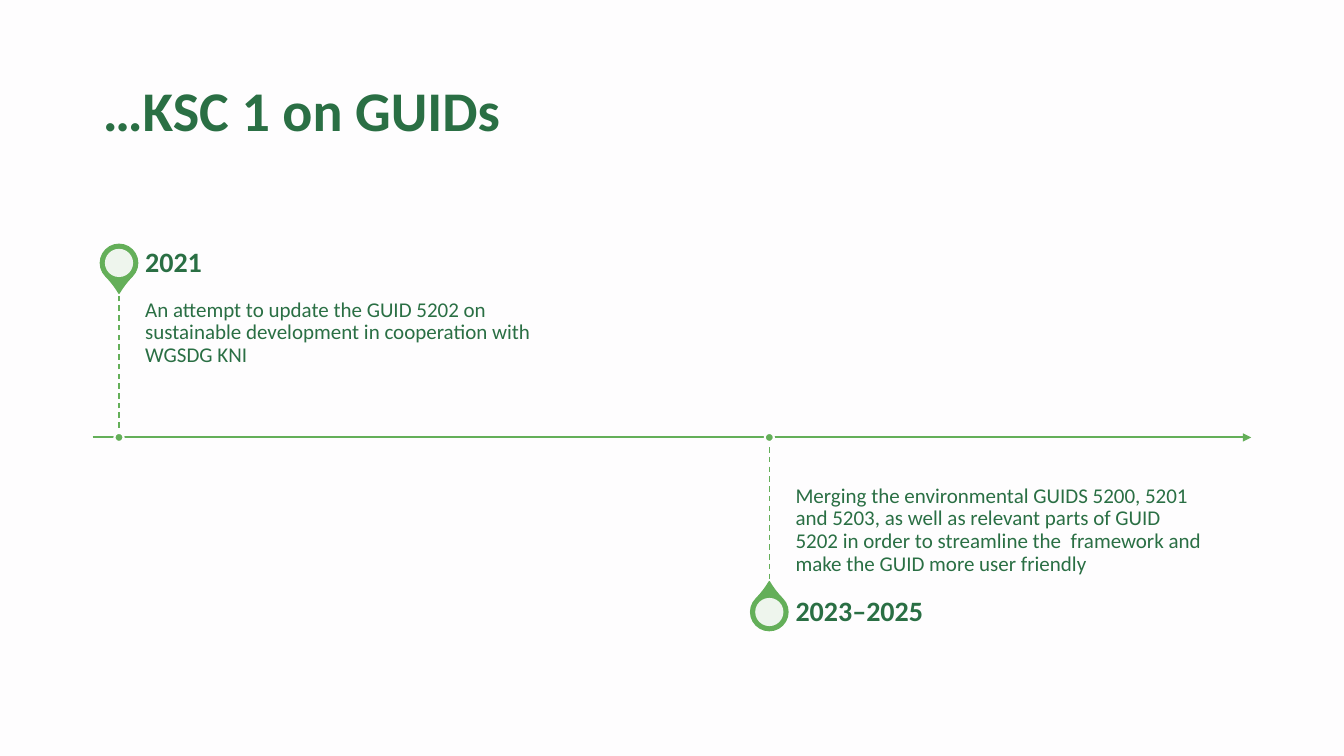
from dataclasses import dataclass

from lxml import etree
from pptx import Presentation
from pptx import util as u
from pptx.dml.color import RGBColor
from pptx.enum import dml, shapes, text
from pptx.oxml import ns


@dataclass(frozen=True)
class Theme:
    paper: str = "FEFDFE"
    ink: str = "2A6F44"
    accent: str = "64AF59"
    font: str = "Calibri"
    title: int = 40
    date: int = 20
    body: int = 15
    thin: float = 1
    thick: float = 1.5
    spacing: float = 0.9


@dataclass(frozen=True)
class Box:
    left: float
    top: float
    width: float
    height: float

    def lengths(self):
        return [u.Inches(n) for n in (self.left, self.top, self.width, self.height)]


THEME = Theme()
WIDTH, HEIGHT = 13.33, 7.5
MARGIN = 0.92
CONTENT = WIDTH - 2 * MARGIN
AXIS = 4.34
STEM = 0.26      # from the left of a milestone to its stem
GUTTER = 0.26    # from the stem to the text
PIN, HOLE, DOT = 0.37, 0.28, 0.09

MILESTONES = [
    (0, True, "2021",
     "An attempt to update the GUID 5202 on sustainable development "
     "in cooperation with WGSDG KNI"),
    (6.45, False, "2023–2025",
     "Merging the environmental GUIDS 5200, 5201 and 5203, as well as relevant "
     "parts of GUID 5202 in order to streamline the  framework and make the "
     "GUID more user friendly"),
]


def colour(value):
    return RGBColor.from_string(value)


def write(holder, words, *, size, bold=False, anchor=text.MSO_ANCHOR.MIDDLE,
          insets=(0.1, 0.05, 0.1, 0.05)):
    """Fill a shape with one formatted paragraph."""
    frame = holder.text_frame
    frame.word_wrap = True
    frame.auto_size = text.MSO_AUTO_SIZE.NONE
    frame.vertical_anchor = anchor
    (frame.margin_left, frame.margin_top,
     frame.margin_right, frame.margin_bottom) = map(u.Inches, insets)
    para = frame.paragraphs[0]
    para.alignment = text.PP_ALIGN.LEFT
    para.line_spacing = THEME.spacing
    span = para.add_run()
    span.text = words
    span.font.name = THEME.font
    span.font.size = u.Pt(size)
    span.font.bold = bold
    span.font.color.rgb = colour(THEME.ink)


def add_text(page, box, words, **style):
    write(page.shapes.add_textbox(*box.lengths()), words, **style)


def add_line(page, start, end, width, dash=None, arrow=False):
    line = page.shapes.add_connector(
        shapes.MSO_CONNECTOR.STRAIGHT, *map(u.Inches, (*start, *end)))
    line.line.color.rgb = colour(THEME.accent)
    line.line.width = u.Pt(width)
    if dash:
        line.line.dash_style = dash
    if arrow:
        etree.SubElement(line.line._get_or_add_ln(), ns.qn("a:tailEnd"), type="triangle")
    etree.SubElement(line._element.spPr, ns.qn("a:effectLst"))


def add_mark(page, kind, centre, size, fill, outline=None, width=THEME.thin):
    """Place a square shape around a centre point."""
    x, y = centre
    box = Box(x - size / 2, y - size / 2, size, size)
    mark = page.shapes.add_shape(kind, *box.lengths())
    mark.shadow.inherit = False
    mark.fill.solid()
    mark.fill.fore_color.rgb = colour(fill)
    if outline:
        mark.line.color.rgb = colour(outline)
        mark.line.width = u.Pt(width)
    else:
        mark.line.fill.background()
    return mark


def add_pin(page, centre, points_down):
    drop = add_mark(page, shapes.MSO_SHAPE.TEAR, centre, PIN, THEME.accent, THEME.accent)
    drop.adjustments[0] = 1.15
    drop.rotation = 135 if points_down else 315
    hole = add_mark(page, shapes.MSO_SHAPE.OVAL, centre, HOLE, THEME.paper)
    tint = hole.fill._xPr.find(".//" + ns.qn("a:srgbClr"))
    etree.SubElement(tint, ns.qn("a:alpha"), val="90000")


def add_milestone(page, box, above, date, words):
    """A pin, its date and its text, standing above or hanging below the axis."""
    stem = box.left + STEM
    left = stem + GUTTER
    width = box.width - STEM - GUTTER
    date_height = 0.26 * box.height
    body_height = box.height - date_height
    if above:
        date_top, body_top = box.top, box.top + date_height
        axis, stem_end = box.top + box.height, body_top
        anchor, insets = text.MSO_ANCHOR.TOP, (0, 0.1, 0, 0.16)
    else:
        date_top, body_top = box.top + body_height, box.top
        axis, stem_end = box.top, date_top
        anchor, insets = text.MSO_ANCHOR.BOTTOM, (0, 0.16, 0.1, 0.1)

    add_pin(page, (stem, date_top + date_height / 2), above)
    add_text(page, Box(left, body_top, width, body_height), words,
             size=THEME.body, anchor=anchor, insets=insets)
    add_text(page, Box(left, date_top, width, date_height), date,
             size=THEME.date, bold=True, insets=(0, 0, 0.14, 0))
    add_line(page, (stem, axis), (stem, stem_end), THEME.thin, dml.MSO_LINE.DASH)
    add_mark(page, shapes.MSO_SHAPE.OVAL, (stem, axis), DOT,
             THEME.accent, THEME.paper, THEME.thick)


def add_title(page, box, words):
    title = page.shapes.title
    title.left, title.top, title.width, title.height = box.lengths()
    write(title, words, size=THEME.title, bold=True)


def add_timeline(page, box):
    """The arrow through the middle of the box and the milestones along it."""
    reach = box.height / 2
    axis = box.top + reach
    add_line(page, (box.left, axis), (box.left + box.width, axis),
             THEME.thick, arrow=True)
    for offset, above, date, words in MILESTONES:
        top = box.top if above else axis
        add_milestone(page, Box(box.left + offset, top, 4.7, reach), above, date, words)


def main():
    deck = Presentation()
    deck.slide_width, deck.slide_height = u.Inches(WIDTH), u.Inches(HEIGHT)
    page = deck.slides.add_slide(deck.slide_layouts[5])
    page.background.fill.solid()
    page.background.fill.fore_color.rgb = colour(THEME.paper)

    add_title(page, Box(MARGIN, 0.4, CONTENT, 1.45), "…KSC 1 on GUIDs")
    add_timeline(page, Box(MARGIN, AXIS - 1.99, CONTENT, 2 * 1.99))
    deck.save("out.pptx")


if __name__ == "__main__":
    main()
